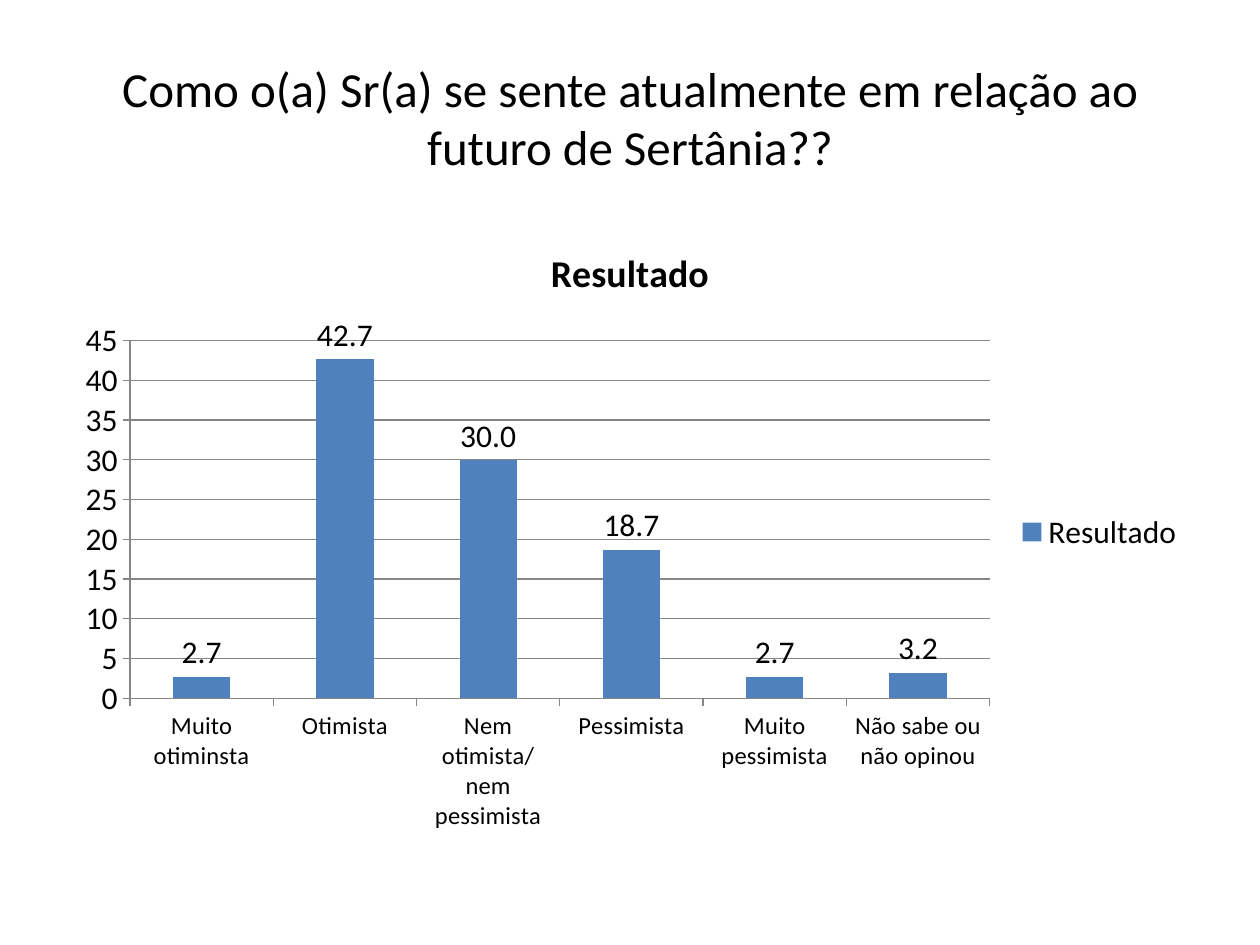
import pptx
import pptx.chart.data
import pptx.dml.color
import pptx.enum.chart
import pptx.enum.text
import pptx.util

EMU_PER_PX = 914400 / 126
FONT = "Calibri"
COLOURS = {"text": "000000", "bar": "4F81BD", "line": "868686"}
RESULTS = {
    "Muito otiminsta": 2.7,
    "Otimista": 42.7,
    "Nem otimista/nem pessimista": 30.0,
    "Pessimista": 18.7,
    "Muito pessimista": 2.7,
    "Não sabe ou não opinou": 3.2,
}


def emu(px):
    return pptx.util.Emu(round(px * EMU_PER_PX))


def colour(name):
    return pptx.dml.color.RGBColor.from_string(COLOURS[name])


def format_font(font, size, bold=False):
    font.name = FONT
    font.size = pptx.util.Pt(size)
    font.bold = bold
    font.color.rgb = colour("text")


def write_text(text_frame, text, size, bold=False, align=None):
    text_frame.text = text
    paragraph = text_frame.paragraphs[0]
    paragraph.alignment = align
    format_font(paragraph.runs[0].font, size, bold)


def format_line(line):
    line.color.rgb = colour("line")
    line.width = pptx.util.Pt(0.75)


def place_title(slide, left, top, width, height):
    title = slide.shapes.title
    title.left, title.top = emu(left), emu(top)
    title.width, title.height = emu(width), emu(height)
    title.text_frame.word_wrap = True
    title.text_frame.vertical_anchor = pptx.enum.text.MSO_ANCHOR.MIDDLE
    write_text(
        title.text_frame,
        "Como o(a) Sr(a) se sente atualmente em relação ao futuro de Sertânia??",
        size=28,
        align=pptx.enum.text.PP_ALIGN.CENTER,
    )


def place_results_chart(slide, left, top, width, height):
    data = pptx.chart.data.CategoryChartData(number_format="0.0")
    data.categories = list(RESULTS)
    data.add_series("Resultado", list(RESULTS.values()))
    chart = slide.shapes.add_chart(
        pptx.enum.chart.XL_CHART_TYPE.COLUMN_CLUSTERED,
        emu(left), emu(top), emu(width), emu(height), data,
    ).chart
    format_font(chart.font, 18)

    # Title and legend
    chart.has_title = True
    write_text(chart.chart_title.text_frame, "Resultado", size=21.6, bold=True)
    chart.chart_title.include_in_layout = False
    chart.has_legend = True
    chart.legend.position = pptx.enum.chart.XL_LEGEND_POSITION.RIGHT
    chart.legend.include_in_layout = False
    format_font(chart.legend.font, 18)

    # Axes
    for axis, size in ((chart.category_axis, 14), (chart.value_axis, 18)):
        format_font(axis.tick_labels.font, size)
        format_line(axis.format.line)
        axis.major_tick_mark = pptx.enum.chart.XL_TICK_MARK.OUTSIDE
    value_axis = chart.value_axis
    value_axis.minimum_scale, value_axis.maximum_scale = 0, 45
    value_axis.major_unit = 5
    value_axis.has_major_gridlines = True
    format_line(value_axis.major_gridlines.format.line)
    value_axis.tick_labels.number_format = "0"
    value_axis.tick_labels.number_format_is_linked = False

    # Bars and their values
    plot = chart.plots[0]
    plot.vary_by_categories = False
    plot.gap_width = 150
    fill = plot.series[0].format.fill
    fill.solid()
    fill.fore_color.rgb = colour("bar")
    labels = plot.series[0].data_labels
    labels.show_value = True
    labels.number_format = "0.0"
    labels.number_format_is_linked = False
    labels.position = pptx.enum.chart.XL_LABEL_POSITION.OUTSIDE_END
    format_font(labels.font, 18)


def main():
    presentation = pptx.Presentation()
    presentation.slide_width, presentation.slide_height = emu(1260), emu(945)
    title_only = presentation.slide_layouts[5]
    slide = presentation.slides.add_slide(title_only)
    place_title(slide, 63, 38, 1134, 158)
    place_results_chart(slide, 63, 220, 1134, 624)
    presentation.save("out.pptx")


if __name__ == "__main__":
    main()
